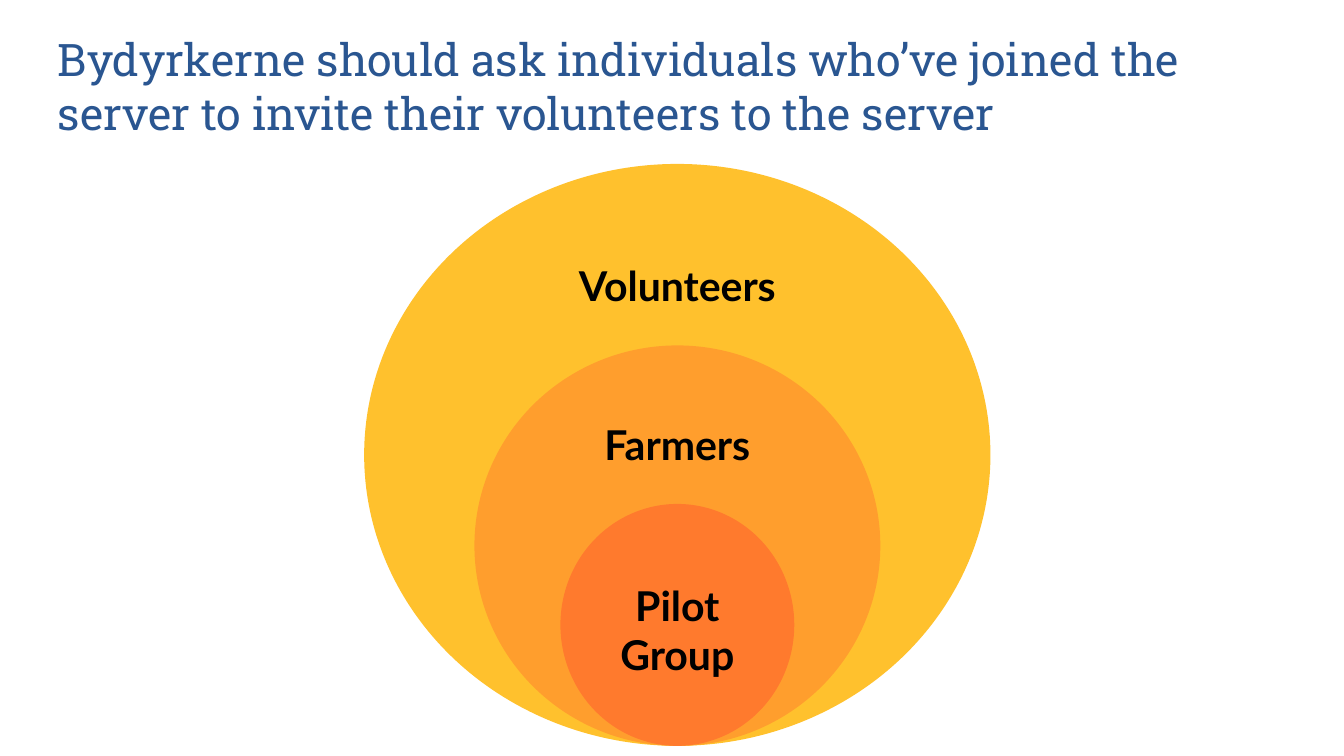
from dataclasses import dataclass
from lxml import etree
from pptx import Presentation
from pptx.dml.color import RGBColor
from pptx.enum.shapes import MSO_SHAPE
from pptx.enum.text import MSO_ANCHOR, MSO_AUTO_SIZE, PP_ALIGN
from pptx.oxml.ns import qn
from pptx.slide import Slide
from pptx.text.text import TextFrame
from pptx.util import Inches, Pt

OVAL = MSO_SHAPE.OVAL
TOP, BOTTOM = MSO_ANCHOR.TOP, MSO_ANCHOR.BOTTOM
LEFT, CENTER = PP_ALIGN.LEFT, PP_ALIGN.CENTER
FIXED = MSO_AUTO_SIZE.NONE


@dataclass(frozen=True)
class Theme:
    white: str = "FFFFFF"
    blue: str = "2A5691"
    black: str = "000000"
    gold: str = "FFC12D"
    amber: str = "FF9E2D"
    orange: str = "FF7A2D"
    head: str = "Roboto Slab"
    body: str = "Lato"
    big: int = 24
    mid: int = 22


@dataclass(frozen=True)
class Ring:
    text: str
    width: float
    height: float
    color: str
    label_top: float
    label_width: float


THEME = Theme()
WIDE = Inches(10)
HIGH = WIDE * 9 // 16  # widescreen
AXIS = 5.04  # shared centre line of the rings
BASE = 5.55  # shared bottom of the rings
RINGS = [
    Ring("Volunteers", 4.66, 4.33, THEME.gold, 1.84, 1.77),
    Ring("Farmers", 3.02, 2.98, THEME.amber, 3.02, 1.66),
    Ring("Pilot Group", 1.74, 1.8, THEME.orange, 4.22, 1.61),
]


def rgb(code: str) -> RGBColor:
    return RGBColor.from_string(code)


def apply(item: object, values: dict) -> None:
    for name, value in values.items():
        setattr(item, name, value)


def write(frame: TextFrame, text: str, anchor: MSO_ANCHOR, align: PP_ALIGN,
          color: str, font: dict) -> None:
    pad = Inches(0.1)
    apply(frame, dict(text=text, word_wrap=True, auto_size=FIXED,
                      vertical_anchor=anchor, margin_left=pad,
                      margin_right=pad, margin_top=pad, margin_bottom=pad))
    line = frame.paragraphs[0]
    apply(line, dict(alignment=align, line_spacing=1.0))
    apply(line.runs[0].font, font)
    line.runs[0].font.color.rgb = rgb(color)


def add_title(slide: Slide, text: str) -> None:
    title = slide.shapes.title
    apply(title, dict(left=Inches(0.33), top=Inches(0.21),
                      width=Inches(9.34), height=Inches(0.93)))
    # White backing at 75% opacity
    title.fill.solid()
    title.fill.fore_color.rgb = rgb(THEME.white)
    tint = title.fill._xPr.find(".//" + qn("a:srgbClr"))
    etree.SubElement(tint, qn("a:alpha"), val="75000")
    write(title.text_frame, text, BOTTOM, LEFT, THEME.blue,
          dict(name=THEME.head, size=Pt(THEME.big), bold=False))


def add_ring(slide: Slide, ring: Ring) -> None:
    oval = slide.shapes.add_shape(
        OVAL, Inches(AXIS - ring.width / 2), Inches(BASE - ring.height),
        Inches(ring.width), Inches(ring.height))
    oval.shadow.inherit = False
    oval.fill.solid()
    oval.fill.fore_color.rgb = rgb(ring.color)
    oval.line.fill.background()


def add_label(slide: Slide, ring: Ring) -> None:
    box = slide.shapes.add_textbox(
        Inches(AXIS - ring.label_width / 2), Inches(ring.label_top),
        Inches(ring.label_width), Inches(0.41))
    write(box.text_frame, ring.text, TOP, CENTER, THEME.black,
          dict(name=THEME.body, size=Pt(THEME.mid), bold=True))


def main() -> None:
    deck = Presentation()
    apply(deck, dict(slide_width=WIDE, slide_height=HIGH))
    slide = deck.slides.add_slide(deck.slide_layouts[5])

    # Heading
    add_title(slide, "Bydyrkerne should ask individuals who’ve joined the "
                     "server to invite their volunteers to the server")

    # Nested rings, outermost first, then their labels
    for ring in RINGS:
        add_ring(slide, ring)
    for ring in RINGS:
        add_label(slide, ring)

    deck.save("out.pptx")


if __name__ == "__main__":
    main()
